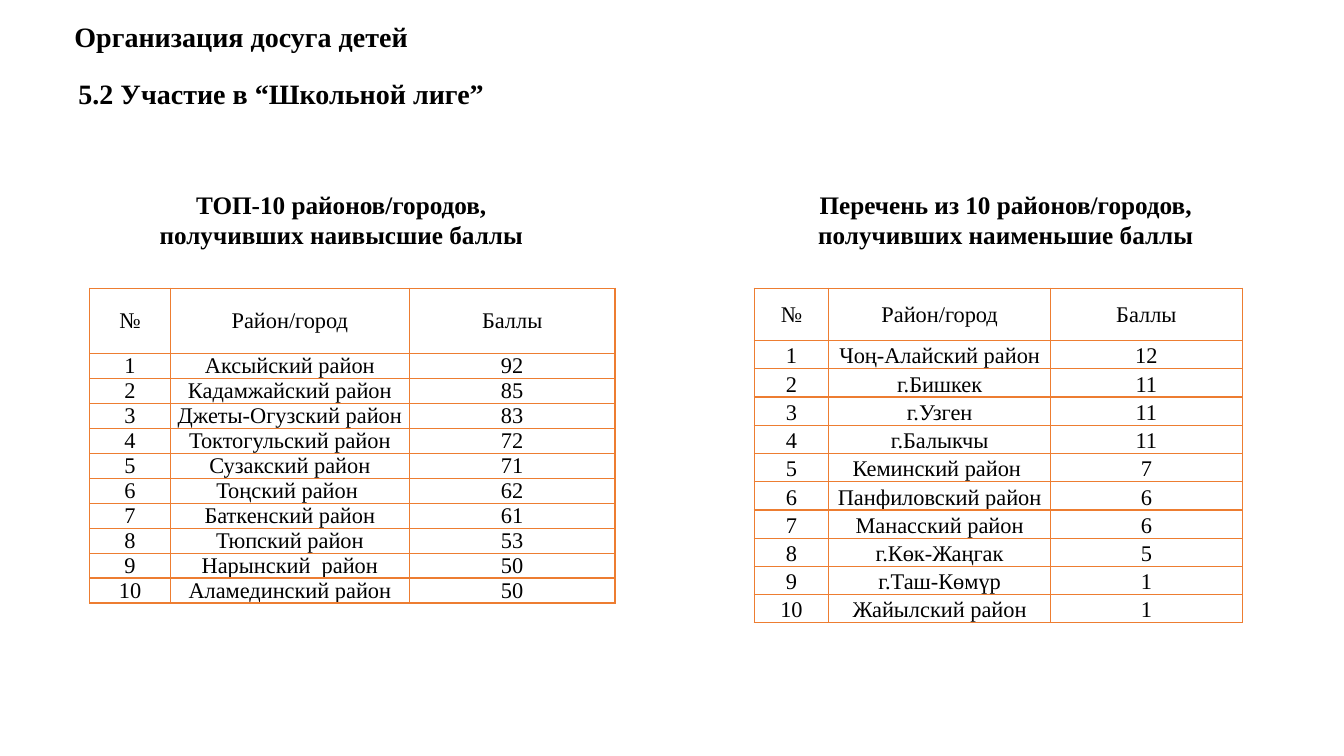
import pptx
import pptx.dml.color
import pptx.enum.text
import pptx.oxml
import pptx.oxml.ns
import pptx.util
from pptx.util import Inches

ALIGN = pptx.enum.text.PP_ALIGN
ANCHOR = pptx.enum.text.MSO_ANCHOR
AUTO_SIZE = pptx.enum.text.MSO_AUTO_SIZE

FONT = "Times New Roman"
BLACK = "000000"
ORANGE = "ED7D31"

HEADER = ("№", "Район/город", "Баллы")
HIGHEST = [
    ("Аксыйский район", 92),
    ("Кадамжайский район", 85),
    ("Джеты-Огузский район", 83),
    ("Токтогульский район", 72),
    ("Сузакский район", 71),
    ("Тоңский район ", 62),
    ("Баткенский район", 61),
    ("Тюпский район", 53),
    ("Нарынский  район", 50),
    ("Аламединский район", 50),
]
LOWEST = [
    ("Чоң-Алайский район", 12),
    ("г.Бишкек", 11),
    ("г.Узген", 11),
    ("г.Балыкчы", 11),
    ("Кеминский район ", 7),
    ("Панфиловский район", 6),
    ("Манасский район", 6),
    ("г.Көк-Жаңгак", 5),
    ("г.Таш-Көмүр", 1),
    ("Жайылский район", 1),
]


def color(value):
    return pptx.dml.color.RGBColor.from_string(value)


def write_text(frame, text, size=16, bold=False, align=ALIGN.CENTER, spacing=None):
    para = frame.paragraphs[0]
    para.alignment = align
    para.line_spacing = spacing
    span = para.add_run()
    span.text = text
    span.font.name = FONT
    span.font.size = pptx.util.Pt(size)
    span.font.bold = bold
    span.font.color.rgb = color(BLACK)
    return para


def add_title(page, text, left, top, width, height):
    title = page.shapes.title
    title.left, title.top = Inches(left), Inches(top)
    title.width, title.height = Inches(width), Inches(height)
    frame = title.text_frame
    frame.auto_size = AUTO_SIZE.NONE
    frame.vertical_anchor = ANCHOR.MIDDLE
    write_text(frame, text, size=20, bold=True, spacing=0.9)


def add_label(page, text, left, top, width, height, wrap=True, indent=0, **text_format):
    box = page.shapes.add_textbox(Inches(left), Inches(top), Inches(width), Inches(height))
    frame = box.text_frame
    frame.word_wrap = wrap
    frame.auto_size = AUTO_SIZE.SHAPE_TO_FIT_TEXT
    para = write_text(frame, text, bold=True, **text_format)
    if indent:
        para._p.get_or_add_pPr().set("marL", str(Inches(indent)))


def outline_cell(cell, line_color, points):
    properties = cell._tc.get_or_add_tcPr()
    for side in "LRTB":
        properties.append(pptx.oxml.parse_xml(
            f'<a:ln{side} {pptx.oxml.ns.nsdecls("a")} w="{pptx.util.Pt(points)}">'
            f'<a:solidFill><a:srgbClr val="{line_color}"/></a:solidFill></a:ln{side}>'))


def fill_cell(cell, text, anchor):
    cell.margin_left = cell.margin_right = cell.margin_top = cell.margin_bottom = 0
    cell.vertical_anchor = anchor
    write_text(cell.text_frame, text)
    outline_cell(cell, ORANGE, 1)
    cell.fill.background()


def add_ranking(page, results, left, top, widths, header_height, row_height):
    """Add a numbered table of districts and their scores."""
    rows = [HEADER] + [(rank, *result) for rank, result in enumerate(results, 1)]
    heights = [header_height] + [row_height] * len(results)
    table = page.shapes.add_table(
        len(rows), len(widths), Inches(left), Inches(top),
        Inches(sum(widths)), Inches(sum(heights))).table
    table.first_row = table.horz_banding = False
    for column, width in zip(table.columns, widths):
        column.width = Inches(width)
    for row_index, (values, height) in enumerate(zip(rows, heights)):
        table.rows[row_index].height = Inches(height)
        anchor = ANCHOR.BOTTOM if row_index else ANCHOR.MIDDLE
        for column_index, value in enumerate(values):
            fill_cell(table.cell(row_index, column_index), str(value), anchor)


def main():
    deck = pptx.Presentation()
    deck.slide_width, deck.slide_height = Inches(13.33), Inches(7.5)
    page = deck.slides.add_slide(deck.slide_layouts[5])

    add_title(page, "5.2 Участие в “Школьной лиге”", 0.56, 0.57, 4.46, 0.75)
    add_ranking(page, HIGHEST, 0.89, 2.86, (0.8, 2.37, 2.04), 0.65, 0.22)
    add_label(page, "ТОП-10 районов/городов, получивших наивысшие баллы",
              1.22, 1.83, 4.33, 0.71, size=18)
    add_label(page, "Перечень из 10 районов/городов, получивших наименьшие баллы",
              7.92, 1.83, 4.11, 0.71, size=18)
    add_ranking(page, LOWEST, 7.48, 2.86, (0.74, 2.2, 1.9), 0.52, 0.28)
    add_label(page, "Организация досуга детей", 0.47, 0.14, 3.7, 0.44,
              wrap=False, indent=0.17, size=20, align=ALIGN.LEFT)

    deck.save("out.pptx")


if __name__ == "__main__":
    main()
